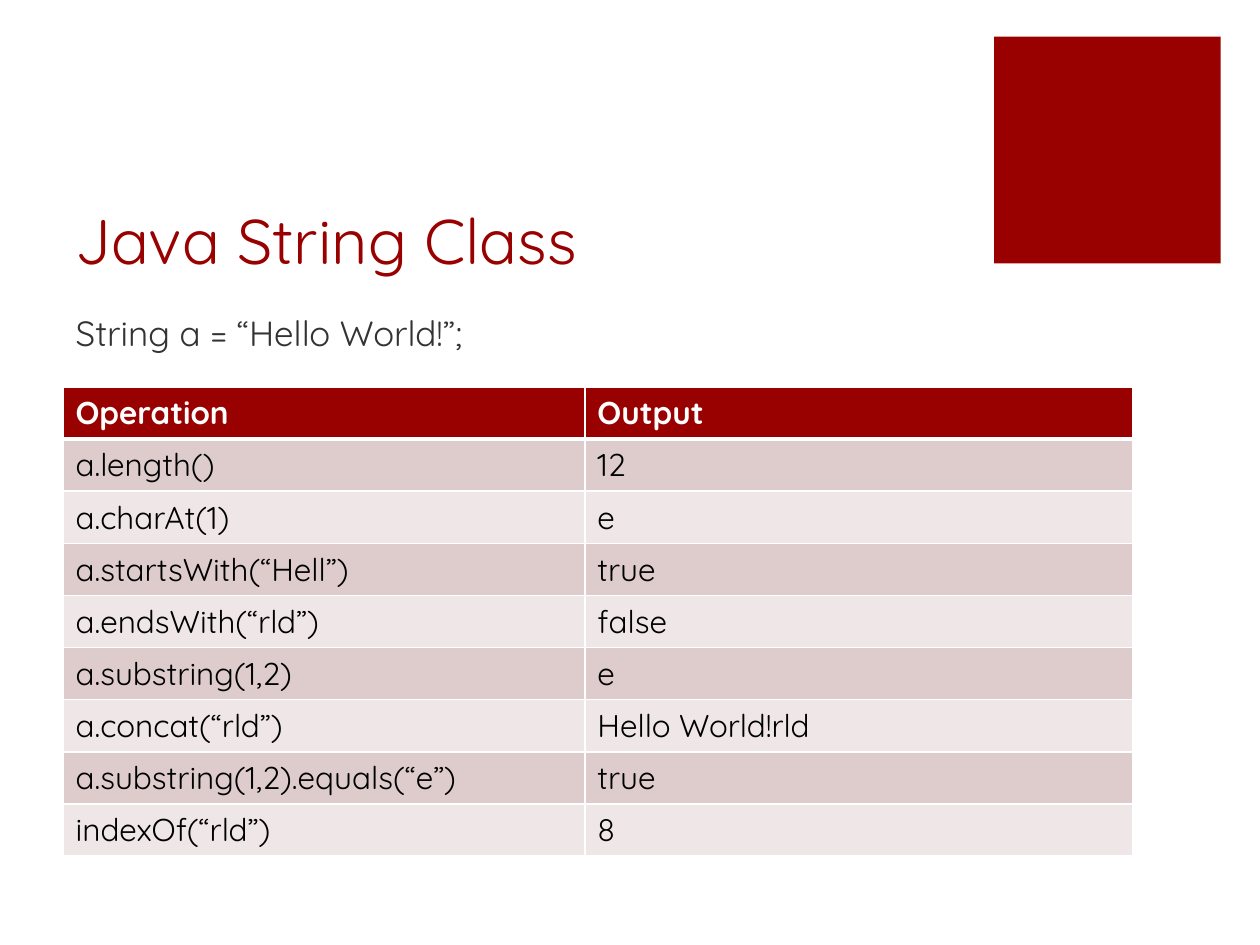
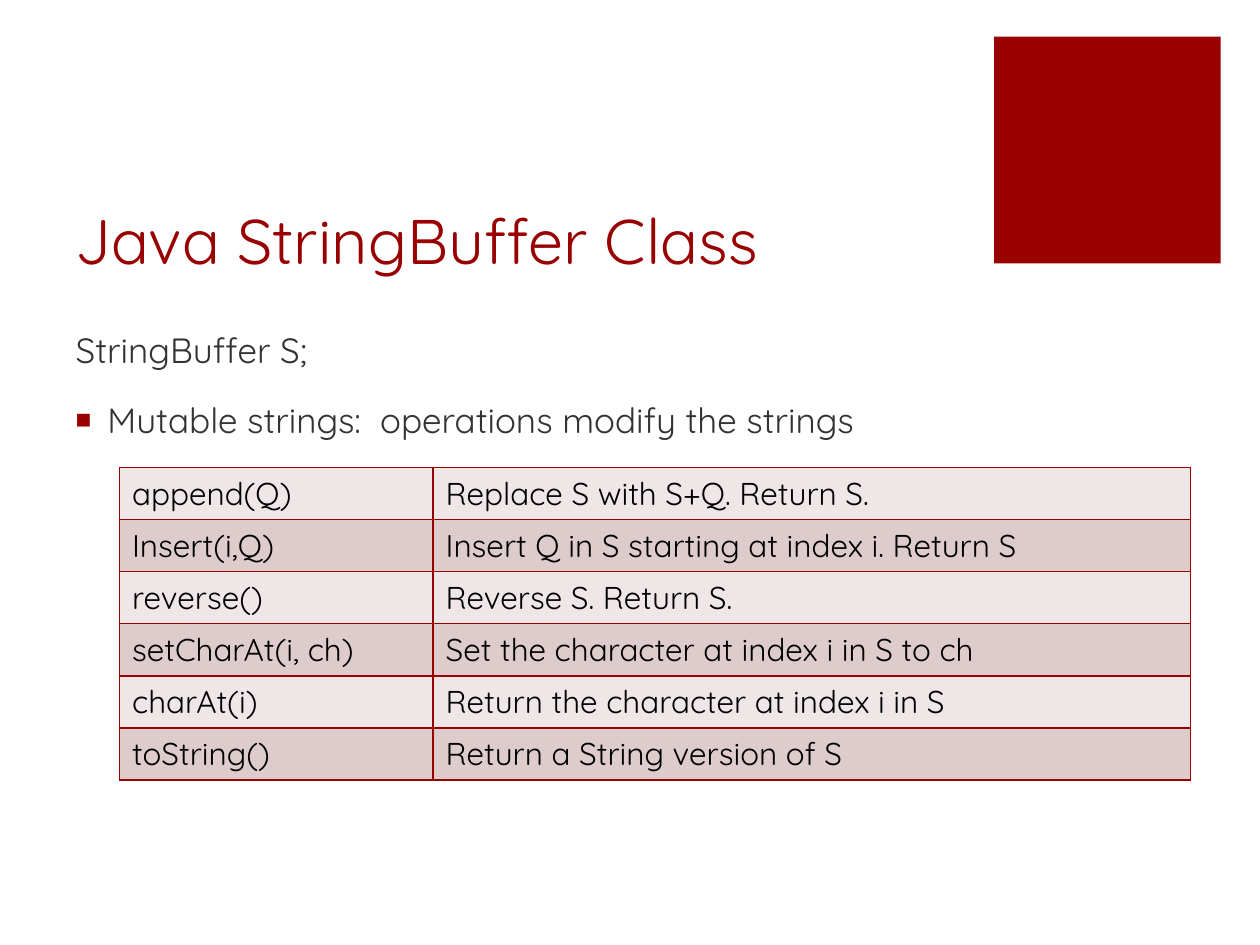
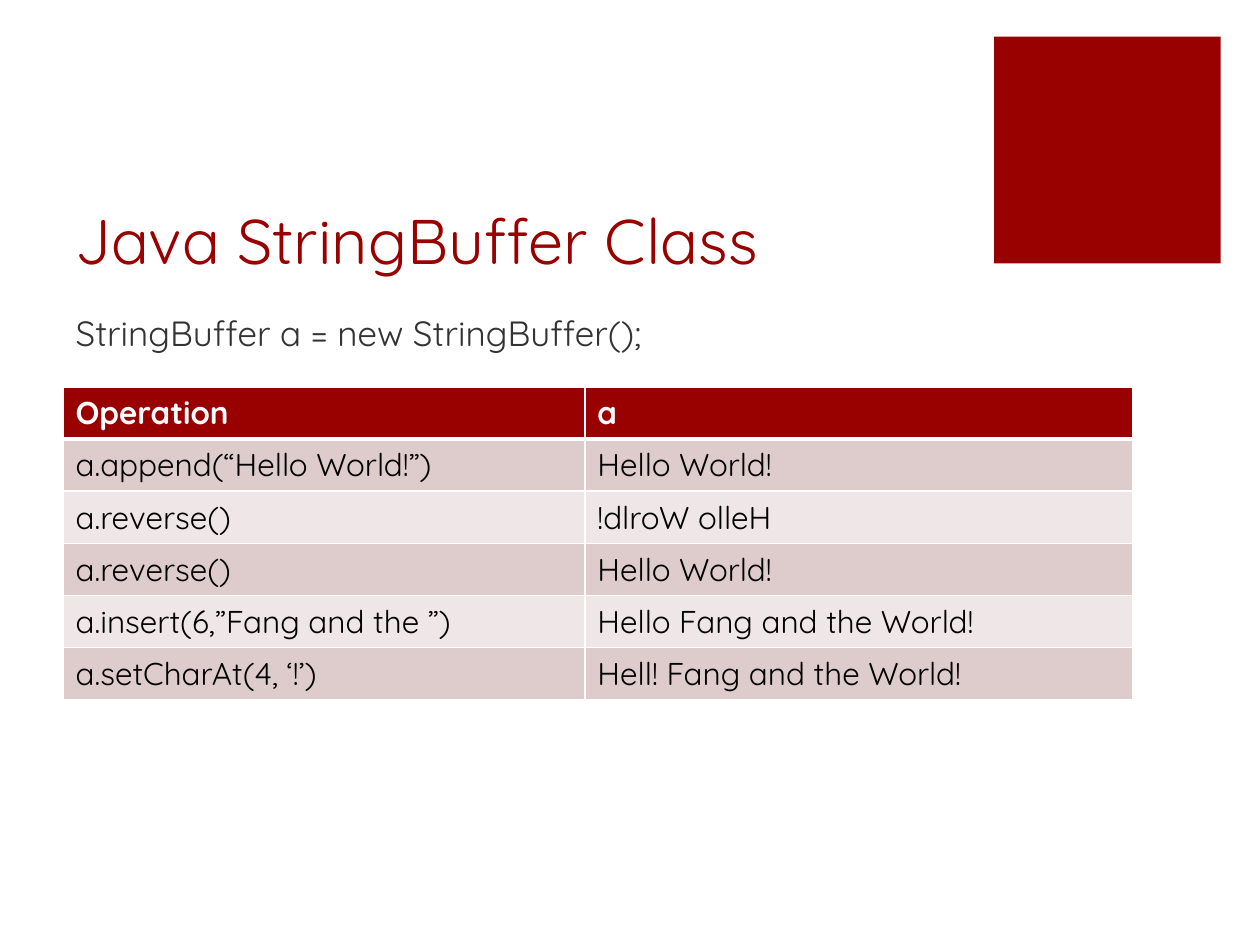
from lxml import etree
from pptx import Presentation
from pptx.dml.color import RGBColor
from pptx.enum import shapes, text
from pptx.oxml import ns
from pptx.util import Cm, Pt

FONT = "Quicksand"
RED, WHITE, BLACK, GREY = "990000", "FFFFFF", "000000", "333333"
DARK_BAND, LIGHT_BAND = "DECCCC", "EFE7E7"
SQUARE = (20.04, 0.74, 4.57, 4.57)
TITLE = (1.27, 2.54, 18.08, 3.18)
SHORT_BODY = (1.27, 6.15, 18.08, 1.65)
LONG_BODY = (1.27, 6.6, 23.39, 11.18)
ROW_HEIGHT = 1.03
OUTPUT_TABLE = {"at": (1.27, 7.8), "cols": (10.52, 11.05), "header": True,
                "border": WHITE, "bands": (DARK_BAND, LIGHT_BAND)}
METHOD_TABLE = {"at": (2.41, 9.42), "cols": (6.32, 15.27), "header": False,
                "border": RED, "bands": (LIGHT_BAND, DARK_BAND)}

SLIDES = [
    {"title": "Java String Class",
     "body": [("String a = “Hello World!”;", False)],
     "box": SHORT_BODY, "spacing": 1.0, "table": OUTPUT_TABLE,
     "rows": [("Operation", "Output"),
              ("a.length()", "12"),
              ("a.charAt(1)", "e"),
              ("a.startsWith(“Hell”)", "true"),
              ("a.endsWith(“rld”)", "false"),
              ("a.substring(1,2)", "e"),
              ("a.concat(“rld”)", "Hello World!rld"),
              ("a.substring(1,2).equals(“e”)", "true"),
              ("indexOf(“rld”)", "8")]},
    {"title": "Java StringBuffer Class",
     "body": [("StringBuffer S;", False),
              ("Mutable strings:  operations modify the strings", True)],
     "box": LONG_BODY, "spacing": 0.9, "table": METHOD_TABLE,
     "rows": [("append(Q)", "Replace S with S+Q. Return S."),
              ("Insert(i,Q)", "Insert Q in S starting at index i. Return S"),
              ("reverse()", "Reverse S. Return S."),
              ("setCharAt(i, ch)", "Set the character at index i in S to ch"),
              ("charAt(i)", "Return the character at index i in S"),
              ("toString()", "Return a String version of S")]},
    {"title": "Java StringBuffer Class",
     "body": [("StringBuffer a = new StringBuffer();", False)],
     "box": SHORT_BODY, "spacing": 1.0, "table": OUTPUT_TABLE,
     "rows": [("Operation", "a"),
              ("a.append(“Hello World!”)", "Hello World!"),
              ("a.reverse()", "!dlroW olleH"),
              ("a.reverse()", "Hello World!"),
              ("a.insert(6,”Fang and the ”)", "Hello Fang and the World!"),
              ("a.setCharAt(4, ‘!’)", "Hell! Fang and the World!")]},
]


def rgb(value):
    return RGBColor.from_string(value)


def child(parent, tag, **attrs):
    return etree.SubElement(parent, ns.qn(tag), attrs)


def style(p, size, color, bold=False):
    p.font.name, p.font.size, p.font.bold = FONT, Pt(size), bold
    p.font.color.rgb = rgb(color)


def place(sp, box):
    sp.left, sp.top, sp.width, sp.height = map(Cm, box)


def add_square(s):
    sp = s.shapes.add_shape(shapes.MSO_SHAPE.RECTANGLE, *map(Cm, SQUARE))
    sp.shadow.inherit = False
    sp.fill.solid()
    sp.fill.fore_color.rgb = rgb(RED)
    sp.line.fill.background()


def set_title(s, title):
    sp = s.shapes.title
    place(sp, TITLE)
    tf = sp.text_frame
    tf.text = title
    tf.vertical_anchor = text.MSO_ANCHOR.BOTTOM
    tf.auto_size = text.MSO_AUTO_SIZE.NONE
    p = tf.paragraphs[0]
    p.alignment = text.PP_ALIGN.LEFT
    style(p, 36, RED)


def set_body(s, lines, box, spacing):
    sp = s.placeholders[1]
    place(sp, box)
    tf = sp.text_frame
    tf.text = "\n".join(line for line, _ in lines)
    tf.auto_size = text.MSO_AUTO_SIZE.NONE
    for p, (_, bulleted) in zip(tf.paragraphs, lines):
        p.space_before, p.line_spacing = Pt(18), spacing
        pPr = p._p.get_or_add_pPr()
        pPr.set("marL", str(Cm(0.64)))
        pPr.set("indent", str(-Cm(0.64)))
        if bulleted:
            child(child(pPr, "a:buClr"), "a:srgbClr", val=RED)
            child(pPr, "a:buSzPct", val="75000")
            child(pPr, "a:buChar", char="■")
        else:
            child(pPr, "a:buNone")
        style(p, 20, GREY)


def set_borders(cell, color, widths):
    tcPr = cell._tc.get_or_add_tcPr()
    for side, width in widths.items():
        ln = child(tcPr, f"a:ln{side}", w=str(Pt(width)))
        child(child(ln, "a:solidFill"), "a:srgbClr", val=color)


def add_table(s, rows, look):
    cols, header = look["cols"], look["header"]
    table = s.shapes.add_table(len(rows), len(cols), *map(Cm, look["at"]),
                               Cm(sum(cols)), Cm(ROW_HEIGHT * len(rows))).table
    table.first_row, table.horz_banding = header, False
    for column, width in zip(table.columns, cols):
        column.width = Cm(width)
    for i, values in enumerate(rows):
        table.rows[i].height = Cm(ROW_HEIGHT)
        is_head = header and i == 0
        fill = RED if is_head else look["bands"][(i - header) % 2]
        widths = {"L": 1, "R": 1, "T": 3 if header and i == 1 else 1,
                  "B": 3 if is_head else 1}
        for j, value in enumerate(values):
            cell = table.cell(i, j)
            cell.text = value
            set_borders(cell, look["border"], widths)
            cell.fill.solid()
            cell.fill.fore_color.rgb = rgb(fill)
            style(cell.text_frame.paragraphs[0], 18,
                  WHITE if is_head else BLACK, is_head)


def main():
    prs = Presentation()
    prs.slide_width, prs.slide_height = Cm(25.4), Cm(19.05)
    for data in SLIDES:
        s = prs.slides.add_slide(prs.slide_layouts[1])
        add_square(s)
        set_title(s, data["title"])
        set_body(s, data["body"], data["box"], data["spacing"])
        add_table(s, data["rows"], data["table"])
    prs.save("out.pptx")


if __name__ == "__main__":
    main()
